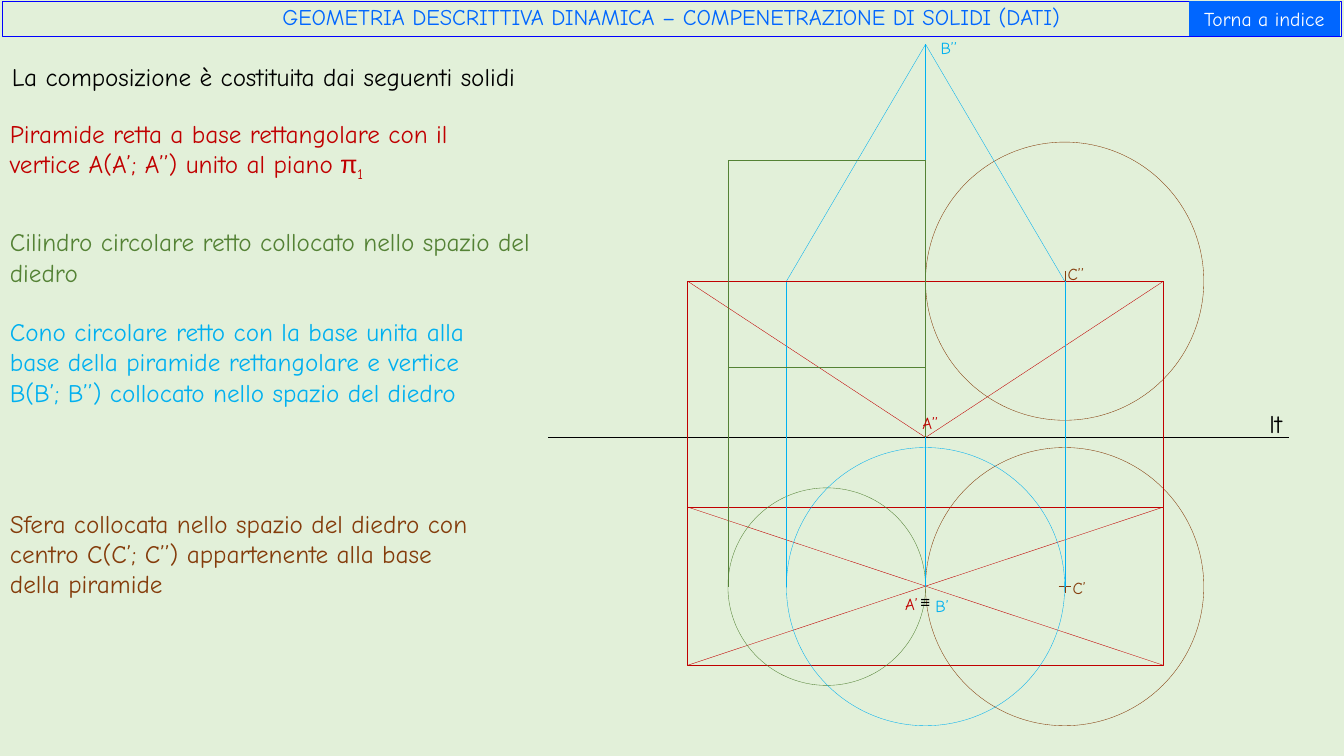
from lxml.etree import SubElement
from pptx import Presentation
from pptx.dml.color import RGBColor
from pptx.enum.shapes import MSO_CONNECTOR, MSO_SHAPE
from pptx.enum.text import MSO_ANCHOR, MSO_AUTO_SIZE, PP_ALIGN
from pptx.oxml.ns import qn
from pptx.util import Inches, Pt

RED, GREEN, CYAN, BROWN = "C00000", "548235", "00B0F0", "843C0B"
BLACK, WHITE, BLUE = "000000", "FFFFFF", "0066FF"
COMIC = "Comic Neue"

AXIS, RADIUS, HALF, CYL = 9.18, 1.38, 2.36, 1.96
LEFT, RIGHT = AXIS - HALF, AXIS + HALF
CYL_X, CONE_X, C_X = AXIS - CYL, AXIS - RADIUS, AXIS + RADIUS
APEX, CYL_TOP, BASE, CYL_BOTTOM, GROUND = 0.44, 1.59, 2.79, 3.64, 4.34
BACK, MID, FRONT = 5.03, 5.82, 6.6

prs = Presentation()
prs.slide_width, prs.slide_height = Inches(13.33), Inches(7.5)
s = prs.slides.add_slide(prs.slide_layouts[6])
s.background.fill.solid()
s.background.fill.fore_color.rgb = RGBColor.from_string("E2F0D9")


def outline(shapes, kind, x, y, w, h, color):
    sp = shapes.add_shape(kind, Inches(x), Inches(y), Inches(w), Inches(h))
    sp.shadow.inherit = False
    sp.fill.background()
    sp.line.color.rgb = RGBColor.from_string(color)
    sp.line.width = Pt(0.25)
    return sp


def segment(shapes, color, x1, y1, x2, y2, width=0.25):
    c = shapes.add_connector(MSO_CONNECTOR.STRAIGHT, Inches(x1), Inches(y1), Inches(x2), Inches(y2))
    c.line.color.rgb = RGBColor.from_string(color)
    c.line.width = Pt(width)
    SubElement(c._element.spPr, qn("a:effectLst"))
    return c


title = outline(s.shapes, MSO_SHAPE.RECTANGLE, 0.02, 0.01, 13.28, 0.35, "0000FF")
button = outline(s.shapes, MSO_SHAPE.ACTION_BUTTON_CUSTOM, 11.79, 0.01, 1.5, 0.35, BLUE)
button.fill.solid()
button.fill.fore_color.rgb = RGBColor.from_string(BLUE)
button.line.fill.background()

segment(s.shapes, BLACK, 5.44, GROUND, 12.78, GROUND)
pyramid = outline(s.shapes, MSO_SHAPE.RECTANGLE, LEFT, BACK, 2 * HALF, FRONT - BACK, RED)
segment(s.shapes, RED, LEFT, MID, LEFT, BASE).begin_connect(pyramid, 1)
for x1, y1, x2, y2 in [
    (LEFT, BACK, RIGHT, FRONT),
    (LEFT, FRONT, RIGHT, BACK),
    (AXIS, MID, AXIS, GROUND),
    (LEFT, BASE, AXIS, GROUND),
    (RIGHT, BASE, AXIS, GROUND),
]:
    segment(s.shapes, RED, x1, y1, x2, y2)

for cy, arm_x, arm_y in [(BASE, 0.27, 0.1), (MID, 0.06, 0.06)]:
    sphere = s.shapes.add_group_shape().shapes
    outline(sphere, MSO_SHAPE.OVAL, AXIS, cy - RADIUS, 2 * RADIUS, 2 * RADIUS, BROWN)
    segment(sphere, BROWN, C_X - arm_x, cy, C_X + arm_x, cy)
    segment(sphere, BROWN, C_X, cy - arm_y, C_X, cy + arm_y)

outline(s.shapes, MSO_SHAPE.OVAL, CYL_X, MID - CYL / 2, CYL, CYL, GREEN)
outline(s.shapes, MSO_SHAPE.OVAL, CONE_X, MID - RADIUS, 2 * RADIUS, 2 * RADIUS, CYAN)

for color, x1, y1, x2, y2, width in [
    (BROWN, C_X, BASE, C_X, MID, 0.25),
    (CYAN, CONE_X, BASE, CONE_X, MID, 0.25),
    (CYAN, AXIS, APEX, CONE_X, BASE, 0.25),
    (CYAN, AXIS, APEX, C_X, BASE, 0.25),
    (RED, AXIS, BASE, RIGHT, BASE, 0.25),
    (RED, LEFT, BASE, AXIS, BASE, 0.25),
    (RED, RIGHT, BACK, RIGHT, BASE, 0.5),
    (GREEN, CYL_X, GROUND, CYL_X, MID, 0.25),
    (CYAN, AXIS, APEX, AXIS, MID, 0.25),
    (GREEN, CYL_X, CYL_TOP, CYL_X, GROUND, 0.25),
    (GREEN, CYL_X, CYL_TOP, AXIS, CYL_TOP, 0.25),
    (GREEN, CYL_X, CYL_BOTTOM, AXIS, CYL_BOTTOM, 0.25),
    (GREEN, AXIS, CYL_TOP, AXIS, GROUND, 0.25),
    (CYAN, C_X, BASE, C_X, MID, 0.25),
]:
    segment(s.shapes, color, x1, y1, x2, y2, width)

for sp, text, size, color in [
    (title, "GEOMETRIA DESCRITTIVA DINAMICA – COMPENETRAZIONE DI SOLIDI (DATI)", 16, BLUE),
    (button, "Torna a indice", 14, WHITE),
]:
    tf = sp.text_frame
    tf.word_wrap = True
    tf.vertical_anchor = MSO_ANCHOR.MIDDLE
    p = tf.paragraphs[0]
    p.alignment = PP_ALIGN.CENTER
    r = p.add_run()
    r.text = text
    for name, value in {"name": COMIC, "size": Pt(size)}.items():
        setattr(r.font, name, value)
    r.font.color.rgb = RGBColor.from_string(color)
title.text_frame.paragraphs[0].line_spacing = 0.9

for x, y, w, h, size, color, font, text in [
    (0.02, 0.56, 6.22, 0.4, 18, BLACK, COMIC, "La composizione è costituita dai seguenti solidi"),
    (0, 1.12, 5.4, 0.71, 18, RED, COMIC,
     "Piramide retta a base rettangolare con il  vertice A(A’; A’’) unito al piano"),
    (0, 2.2, 5.4, 0.71, 18, GREEN, COMIC,
     "Cilindro circolare retto collocato nello spazio del diedro"),
    (0, 3.09, 5.07, 1.31, 18, CYAN, COMIC,
     "Cono circolare retto con la base unita alla base della piramide rettangolare "
     "e vertice B(B’; B’’) collocato nello spazio del diedro"),
    (0, 4.99, 4.85, 1.01, 18, BROWN, COMIC,
     "Sfera collocata nello spazio del diedro con centro C(C’; C’’) appartenente "
     "alla base della piramide"),
    (9.05, 4.05, 0.42, 0.3, 12, RED, COMIC, "A’’"),
    (8.88, 5.84, 0.42, 0.3, 12, RED, COMIC, "A’"),
    (9.23, 0.33, 0.42, 0.3, 12, CYAN, COMIC, "B’’"),
    (9.18, 5.86, 0.42, 0.3, 12, CYAN, COMIC, "B’"),
    (10.49, 2.57, 0.42, 0.3, 12, BROWN, COMIC, "C’’"),
    (10.54, 5.68, 0.42, 0.3, 12, BROWN, COMIC, "C’"),
    (9.03, 5.82, 0.33, 0.35, 12, BLACK, "Arial", "≡"),
    (12.49, 4, 0.62, 0.4, 18, BLACK, COMIC, "lt"),
]:
    tf = s.shapes.add_textbox(Inches(x), Inches(y), Inches(w), Inches(h)).text_frame
    tf.word_wrap = True
    tf.auto_size = MSO_AUTO_SIZE.SHAPE_TO_FIT_TEXT
    runs = [(text, font)]
    if text.startswith("Piramide"):
        runs += [(" π", "Arial"), ("1", COMIC)]
    for part, face in runs:
        r = tf.paragraphs[0].add_run()
        r.text = part
        for name, value in {"name": face, "size": Pt(size)}.items():
            setattr(r.font, name, value)
        r.font.color.rgb = RGBColor.from_string(color)
        if part == "1":
            r.font._element.set("baseline", "-25000")

prs.save("out.pptx")
